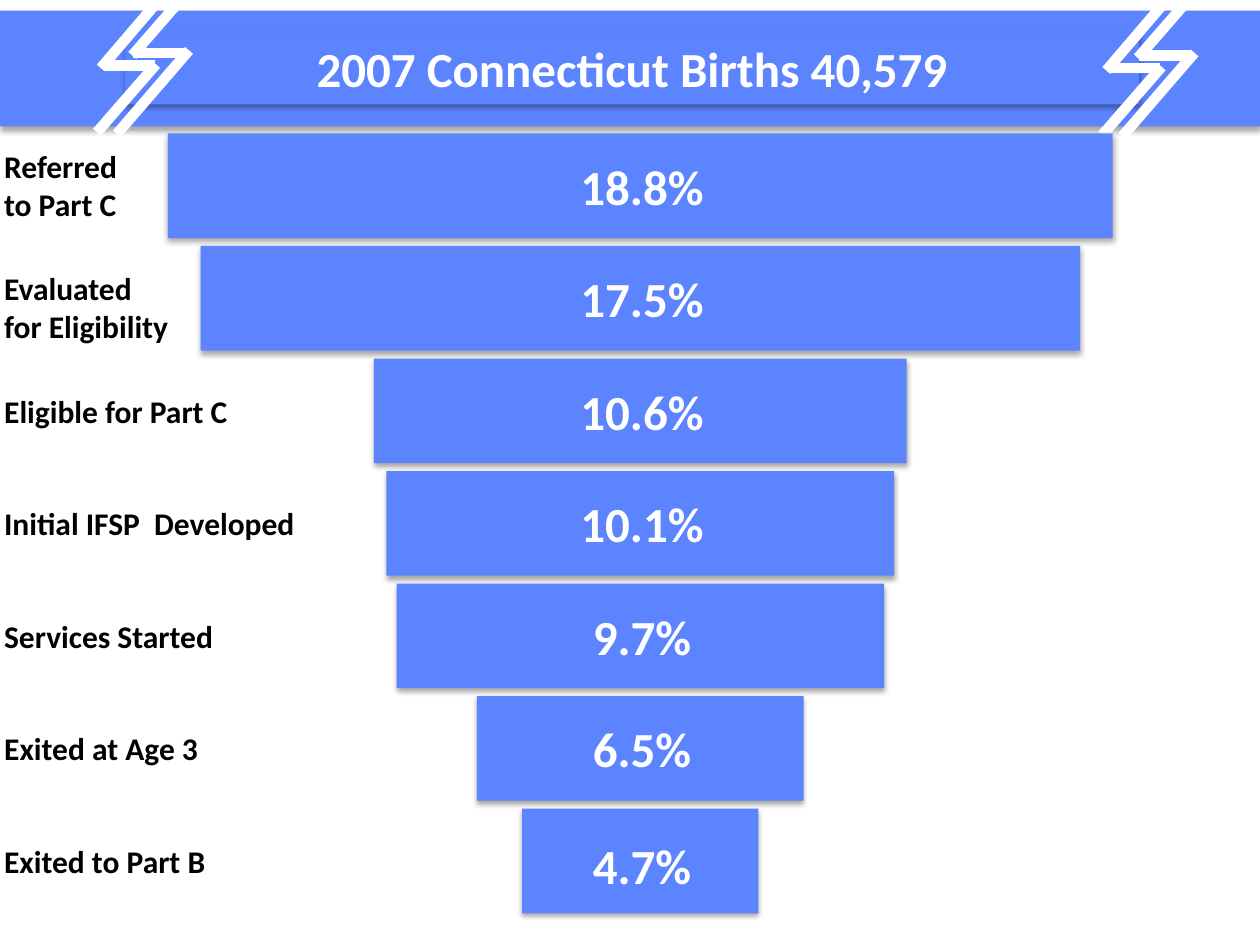
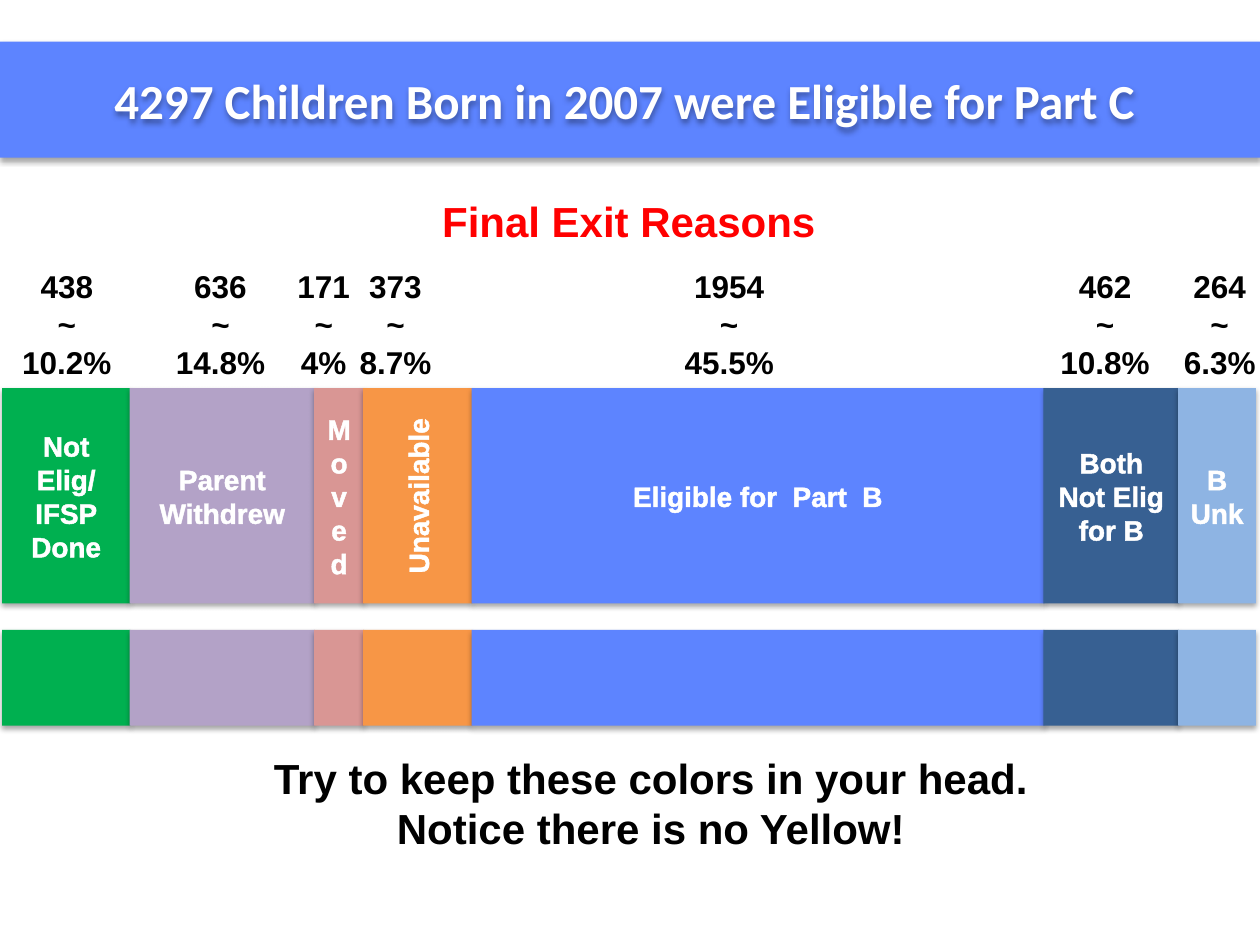
from collections import namedtuple
from dataclasses import dataclass

from lxml import etree
from pptx import Presentation
from pptx import util as u
from pptx.dml.color import RGBColor
from pptx.enum import shapes, text
from pptx.oxml import ns

Box = namedtuple("Box", "left top width height")
Stage = namedtuple("Stage", "label percent label_width label_shift value_shift")
Reason = namedtuple("Reason", "label color left count share count_center")


@dataclass(frozen=True)
class Theme:
    blue: str = "5D84FF"
    navy: str = "376092"
    sky: str = "8EB4E3"
    green: str = "00B050"
    purple: str = "B3A2C7"
    rose: str = "D99694"
    orange: str = "F79646"
    red: str = "FF0000"
    white: str = "FFFFFF"
    black: str = "000000"
    heading_font: str = "Calibri"
    body_font: str = "Arial"
    title_size: int = 28
    subtitle_size: int = 24
    label_size: int = 18
    segment_size: int = 16
    bolt_weight: int = 6
    outline_weight: float = 1.45


THEME = Theme()
SLIDE_WIDTH, SLIDE_HEIGHT = 720, 540
BAND_HEIGHT = 66.3
VALUE_HEIGHT = 41

STAGES = [
    Stage("Referred\vto Part C", 18.8, 83.5, 0, 0),
    Stage("Evaluated\nfor Eligibility", 17.5, 113, 5, 0),
    Stage("Eligible for Part C", 10.6, 147.6, 0, 0),
    Stage("Initial IFSP  Developed", 10.1, 188, 0, 0),
    Stage("Services Started", 9.7, 134.6, 0, 0),
    Stage("Exited at Age 3", 6.5, 126, 0, 0),
    Stage("Exited to Part B", 4.7, 134.6, 0, 2.5),
]

REASONS = [
    Reason("Not Elig/\nIFSP\nDone", THEME.green, 1.2, 438, "10.2%", 38.2),
    Reason("Parent\nWithdrew", THEME.purple, 74, 636, "14.8%", 126),
    Reason("Moved", THEME.rose, 179.5, 171, "4%", 185),
    Reason("Unavailable", THEME.orange, 207.5, 373, "8.7%", 226),
    Reason("Eligible for  Part  B", THEME.blue, 269.5, 1954, "45.5%", 416.7),
    Reason("Both\nNot Elig\nfor B", THEME.navy, 596.3, 462, "10.8%", 631.5),
    Reason("B\nUnk", THEME.sky, 673.3, 264, "6.3%", 697),
]
REASONS_RIGHT = 717.2

BOLT_LINES = [
    (36.7, 0, 2.2, 40.3),
    (33.8, 38.2, 0, 77),
    (49, 0, 20.2, 33.1),
    (52.6, 30.2, 11.5, 77.8),
    (33.1, 38.9, 4.3, 38.9),
    (49.7, 31.7, 20.9, 31.7),
]


def in_points(values):
    return [u.Pt(value) for value in values]


def add_effects(shape):
    return etree.SubElement(shape._element.spPr, ns.qn("a:effectLst"))


def add_shadow(shape):
    shadow = etree.SubElement(
        add_effects(shape), ns.qn("a:outerShdw"),
        blurRad=str(u.Pt(3.1)), dist=str(u.Pt(1.8)), dir="5400000", rotWithShape="0")
    color = etree.SubElement(shadow, ns.qn("a:srgbClr"), val=THEME.black)
    etree.SubElement(color, ns.qn("a:alpha"), val="35000")


def outline_run(run):
    properties = run.font._element
    line = etree.Element(ns.qn("a:ln"), w=str(u.Pt(THEME.outline_weight)))
    fill = etree.SubElement(line, ns.qn("a:solidFill"))
    etree.SubElement(fill, ns.qn("a:srgbClr"), val=THEME.white)
    properties.insert(0, line)


def write(shape, content, size, color, font, align=text.PP_ALIGN.CENTER,
          wrap=True, anchor=text.MSO_ANCHOR.TOP):
    frame = shape.text_frame
    frame.text = content
    frame.word_wrap = wrap
    frame.vertical_anchor = anchor
    for paragraph in frame.paragraphs:
        paragraph.alignment = align
        for run in paragraph.runs:
            run.font.size = u.Pt(size)
            run.font.name = font
            run.font.bold = True
            run.font.color.rgb = RGBColor.from_string(color)


def add_bar(slide, box, color=THEME.blue):
    bar = slide.shapes.add_shape(shapes.MSO_SHAPE.RECTANGLE, *in_points(box))
    bar.fill.solid()
    bar.fill.fore_color.rgb = RGBColor.from_string(color)
    bar.line.fill.background()
    add_shadow(bar)
    return bar


def add_label(slide, box, content, size, color, font, **options):
    label = slide.shapes.add_textbox(*in_points(box))
    write(label, content, size, color, font, **options)
    return label


def add_heading(slide, box, content):
    return add_label(slide, box, content, THEME.title_size, THEME.white, THEME.heading_font)


def add_bolt(slide, left, top):
    for x1, y1, x2, y2 in BOLT_LINES:
        line = slide.shapes.add_connector(
            shapes.MSO_CONNECTOR.STRAIGHT,
            *in_points((left + x1, top + y1, left + x2, top + y2)))
        line.line.color.rgb = RGBColor.from_string(THEME.white)
        line.line.width = u.Pt(THEME.bolt_weight)
        add_effects(line)


def add_births_band(slide, box):
    add_bar(slide, box)
    title = add_bar(slide, Box(box.left + 71.3, box.top + 12.7, 579.6, VALUE_HEIGHT))
    write(title, "2007 Connecticut Births 40,579",
          THEME.title_size, THEME.white, THEME.heading_font)
    add_bolt(slide, box.left + 55.4, box.top - 7.4)
    add_bolt(slide, box.left + 630, box.top - 6)


def add_funnel(slide, box):
    pitch, bar_height, value_width = 64.3, 59.8, 160
    points_per_percent = box.width / STAGES[0].percent
    center = box.left + box.width / 2
    for row, stage in enumerate(STAGES):
        top = box.top + row * pitch
        middle = top + bar_height / 2
        width = stage.percent * points_per_percent
        add_bar(slide, Box(center - width / 2, top, width, bar_height))
        add_heading(
            slide,
            Box(center + 1 - value_width / 2,
                middle - VALUE_HEIGHT / 2 + stage.value_shift, value_width, VALUE_HEIGHT),
            f"{stage.percent}%")
        height = 29 if len(stage.label.splitlines()) == 1 else 51
        add_label(
            slide,
            Box(-4.7, middle - height / 2 + stage.label_shift, stage.label_width, height),
            stage.label, THEME.label_size, THEME.black, THEME.heading_font,
            align=text.PP_ALIGN.LEFT, wrap=False)


def add_reason_strip(slide, top, height, labelled):
    edges = [reason.left for reason in REASONS] + [REASONS_RIGHT]
    for reason, right in zip(REASONS, edges[1:]):
        segment = add_bar(
            slide, Box(reason.left, top, right - reason.left + 0.5, height), reason.color)
        if not labelled:
            continue
        write(segment, reason.label, THEME.segment_size, THEME.white, THEME.body_font,
              anchor=text.MSO_ANCHOR.MIDDLE)
        for paragraph in segment.text_frame.paragraphs:
            for run in paragraph.runs:
                outline_run(run)
        if reason.label == "Unavailable":
            segment.text_frame._txBody.bodyPr.set("vert", "vert270")


def add_reason_counts(slide, top):
    width = 67.7
    for reason in REASONS:
        add_label(slide, Box(reason.count_center - width / 2, top, width, 72.7),
                  f"{reason.count}\n~\n{reason.share}",
                  THEME.label_size, THEME.black, THEME.body_font)


def build_births_slide(slide):
    add_births_band(slide, Box(0, 6, SLIDE_WIDTH, BAND_HEIGHT))
    add_funnel(slide, Box(95.9, 76.3, 540, 445.6))


def build_exits_slide(slide):
    band = Box(0, 23.8, SLIDE_WIDTH, BAND_HEIGHT)
    add_bar(slide, band)
    title = add_heading(slide, Box(23.8, band.top + 12.9, 666, VALUE_HEIGHT),
                        "4297 Children Born in 2007 were Eligible for Part C")
    add_shadow(title)
    add_label(slide, Box(244.5, 108, 229.7, 36), "Final Exit Reasons",
              THEME.subtitle_size, THEME.red, THEME.body_font, wrap=False)
    add_reason_counts(slide, 149)
    add_reason_strip(slide, 221.8, 123, labelled=True)
    add_reason_strip(slide, 360, 54.7, labelled=False)
    add_label(slide, Box(147.3, 426.2, 449.3, 65.5),
              "Try to keep these colors in your head.\nNotice there is no Yellow!",
              THEME.subtitle_size, THEME.black, THEME.body_font, wrap=False)


def main():
    presentation = Presentation()
    presentation.slide_width = u.Pt(SLIDE_WIDTH)
    presentation.slide_height = u.Pt(SLIDE_HEIGHT)
    blank = presentation.slide_layouts[6]
    for build in (build_births_slide, build_exits_slide):
        build(presentation.slides.add_slide(blank))
    presentation.save("out.pptx")


if __name__ == "__main__":
    main()
